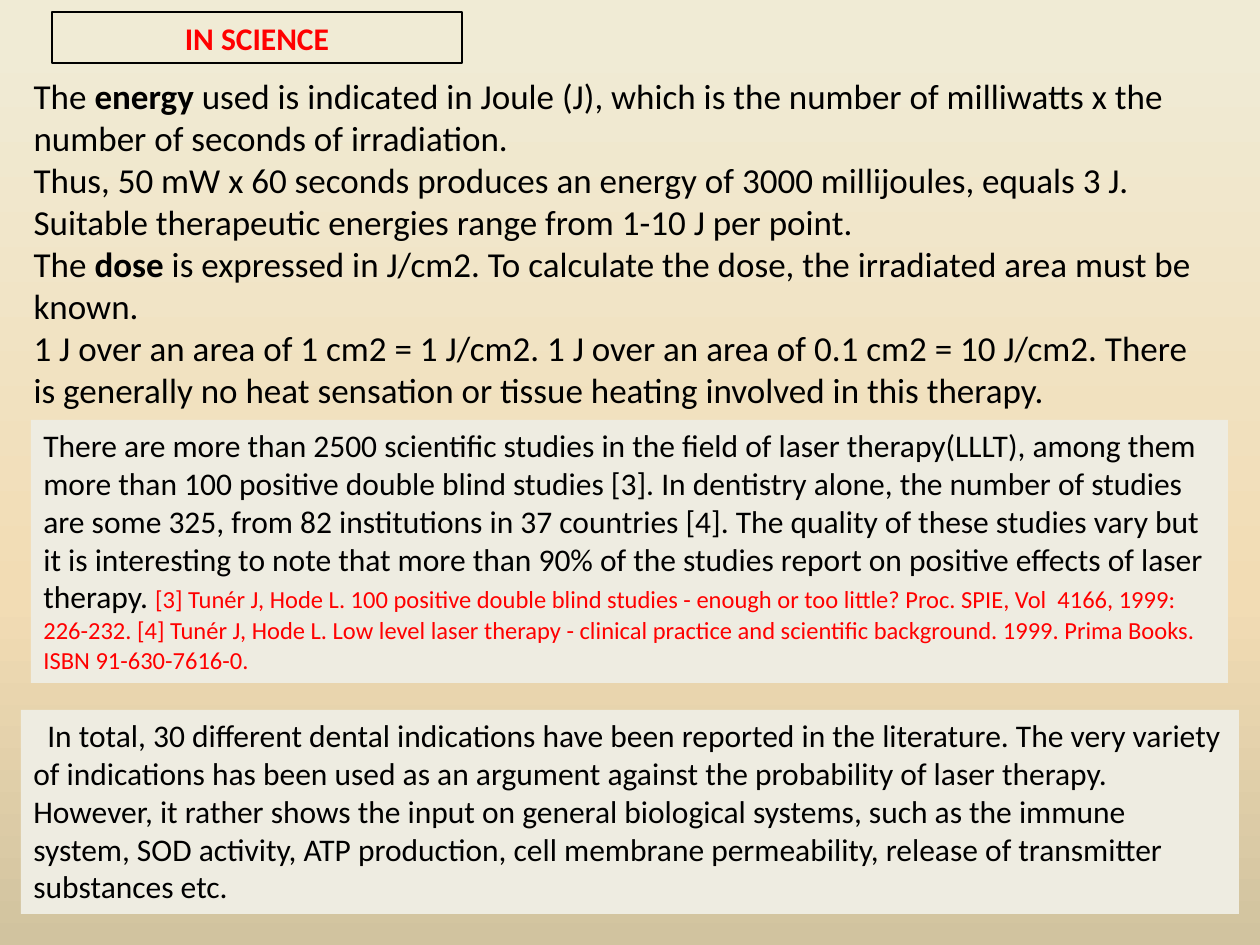
import copy
import pptx
import pptx.dml.color
import pptx.enum.shapes
import pptx.enum.text
import pptx.oxml.ns
import pptx.util

PX = 914400 / 126
FONT = "Calibri"
COLORS = {
    "ink": "000000", "red": "FF0000", "panel": "EEECE1",
    "top": "F0EBD5", "mid": "F2DCB4", "base": "D1C39F",
}

ENERGY = [
    [("The ", False), ("energy", True),
     (" used is indicated in Joule (J), which is the number of milliwatts x the "
      "number of seconds of irradiation.", False)],
    [("Thus, 50 mW x 60 seconds produces an energy of 3000 millijoules, equals 3 J. "
      "Suitable therapeutic energies range from 1-10 J per point.", False)],
    [("The ", False), ("dose ", True),
     ("is expressed in J/cm2. To calculate the dose, the irradiated area must be known.", False)],
    [("1 J over an area of 1 cm2 = 1 J/cm2. 1 J over an area of 0.1 cm2 = 10 J/cm2. "
      "There is generally no heat sensation or tissue heating involved in this therapy.", False)],
]
STUDIES = (
    "There are more than 2500 scientific studies in the field of laser therapy(LLLT), among "
    "them more than 100 positive double blind studies [3]. In dentistry alone, the number of "
    "studies are some 325, from 82 institutions in 37 countries [4]. The quality of these "
    "studies vary but it is interesting to note that more than 90% of the studies report on "
    "positive effects of laser therapy. ")
SOURCES = (
    "[3] Tunér J, Hode L. 100 positive double blind studies - enough or too little? Proc. SPIE, "
    "Vol  4166, 1999: 226-232. [4] Tunér J, Hode L. Low level laser therapy - clinical practice "
    "and scientific background. 1999. Prima Books. ISBN 91-630-7616-0.")
TOTAL = (
    "In total, 30 different dental indications have been reported in the literature. The very "
    "variety of indications has been used as an argument against the probability of laser "
    "therapy. However, it rather shows the input on general biological systems, such as the "
    "immune system, SOD activity, ATP production, cell membrane permeability, release of "
    "transmitter substances etc.")


def emu(px):
    return pptx.util.Emu(round(px * PX))


def color(name):
    return pptx.dml.color.RGBColor.from_string(COLORS[name])


def place(shape, box):
    shape.left, shape.top, shape.width, shape.height = map(emu, box)


def style(run, size, tint="ink", bold=False):
    run.font.name = FONT
    run.font.size = pptx.util.Pt(size)
    run.font.bold = bold
    run.font.color.rgb = color(tint)


def setup(frame, anchor):
    frame.word_wrap = True
    frame.auto_size = pptx.enum.text.MSO_AUTO_SIZE.NONE
    frame.vertical_anchor = anchor


def paint(slide):
    fill = slide.background.fill
    fill.gradient()
    fill.gradient_angle = 270
    stops = slide.element.xpath(".//a:gsLst")[0]
    stops.append(copy.deepcopy(stops[-1]))
    marks = [(0.04, "top"), (0.63, "mid"), (1, "base")]
    for stop, (spot, name) in zip(fill.gradient_stops, marks):
        stop.position = spot
        stop.color.rgb = color(name)


def title(slide, box):
    shape = slide.shapes.title
    place(shape, box)
    shape.line.color.rgb = color("ink")
    shape.line.width = pptx.util.Pt(0.75)
    setup(shape.text_frame, pptx.enum.text.MSO_ANCHOR.MIDDLE)
    shape.text_frame.text = "IN SCIENCE"
    para = shape.text_frame.paragraphs[0]
    para.alignment = pptx.enum.text.PP_ALIGN.CENTER
    style(para.runs[0], 18, "red", True)


def body(slide, box):
    shape = slide.placeholders[1]
    place(shape, box)
    frame = shape.text_frame
    setup(frame, pptx.enum.text.MSO_ANCHOR.TOP)
    for index, parts in enumerate(ENERGY):
        para = frame.add_paragraph() if index else frame.paragraphs[0]
        props = para._p.get_or_add_pPr()
        props.set("marL", "0")
        props.set("indent", "0")
        props.append(props.makeelement(pptx.oxml.ns.qn("a:buNone"), {}))
        para.space_before = pptx.util.Pt(0)
        for text, bold in parts:
            run = para.add_run()
            run.text = text
            style(run, 20, bold=bold)


def panel(slide, box, parts, indent=0):
    shape = slide.shapes.add_shape(pptx.enum.shapes.MSO_SHAPE.RECTANGLE, *map(emu, box))
    shape.shadow.inherit = False
    shape.fill.solid()
    shape.fill.fore_color.rgb = color("panel")
    shape.line.fill.background()
    setup(shape.text_frame, pptx.enum.text.MSO_ANCHOR.TOP)
    para = shape.text_frame.paragraphs[0]
    para.alignment = pptx.enum.text.PP_ALIGN.LEFT
    para._p.get_or_add_pPr().set("indent", str(emu(indent)))
    for text, size, tint in parts:
        run = para.add_run()
        run.text = text
        style(run, size, tint)


def main():
    deck = pptx.Presentation()
    deck.slide_width, deck.slide_height = emu(1260), emu(945)
    slide = deck.slides.add_slide(deck.slide_layouts[1])
    paint(slide)
    title(slide, (52, 12, 410, 51))
    body(slide, (21, 68, 1207, 352))
    panel(slide, (31, 420, 1197, 263), [(STUDIES, 18, "ink"), (SOURCES, 14, "red")])
    panel(slide, (21, 710, 1218, 204), [(TOTAL, 18, "ink")], 14)
    deck.save("out.pptx")


if __name__ == "__main__":
    main()
